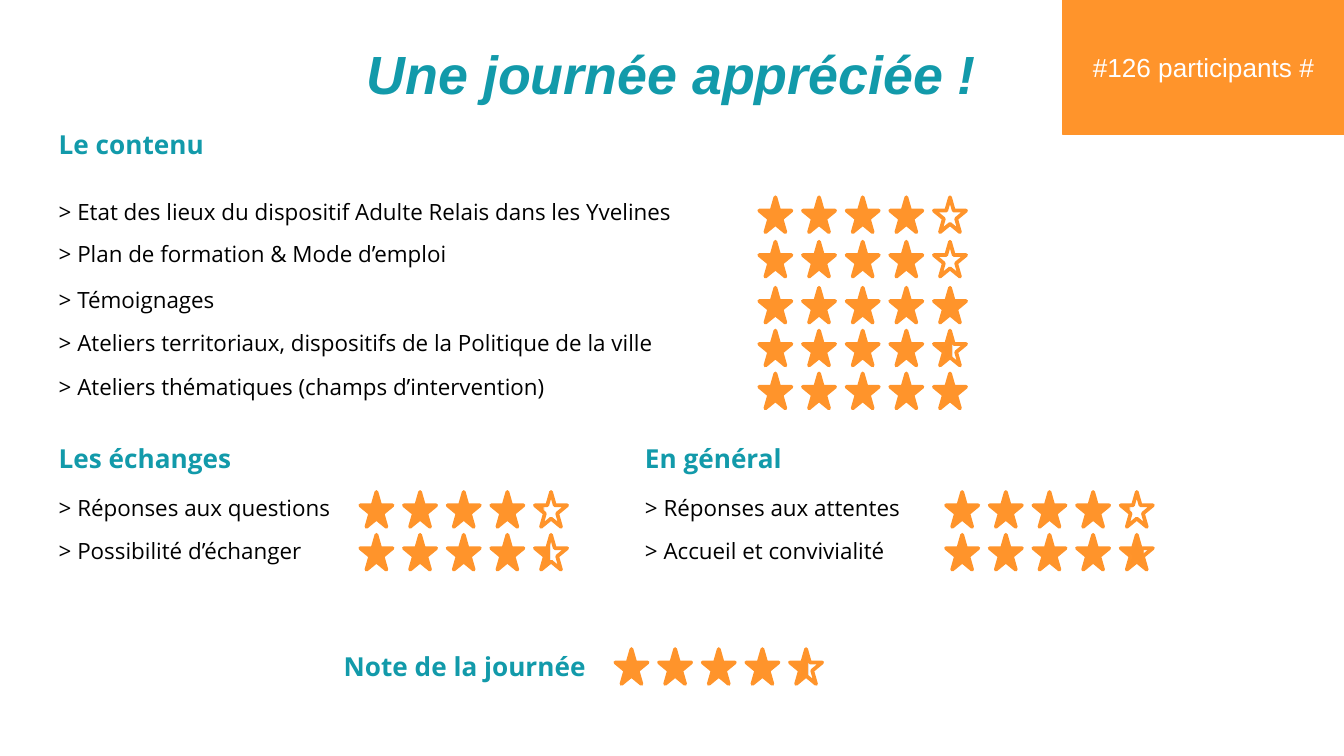
from lxml import etree
from pptx import Presentation
from pptx import util as u
from pptx.dml import color
from pptx.enum import shapes, text
from pptx.oxml import ns

TEAL = color.RGBColor(0x12, 0x9A, 0xAA)
ORANGE = color.RGBColor(0xFF, 0x94, 0x2B)
BLACK = color.RGBColor(0x00, 0x00, 0x00)
WHITE = color.RGBColor(0xFF, 0xFF, 0xFF)
LEFT, RIGHT = 0.86, 11.94
STAR_WIDTH, STAR_HEIGHT, STAR_STEP = 0.61, 0.66, 3.3 / 4

deck = Presentation()
deck.slide_width, deck.slide_height = u.Cm(25.4), u.Cm(14.29)
page = deck.slides.add_slide(deck.slide_layouts[6])


def write(box, words, size, ink, font="Open Sans", bold=False, align=text.PP_ALIGN.LEFT):
    frame = box.text_frame
    frame.word_wrap = True
    frame.margin_left = frame.margin_right = u.Cm(0.25)
    frame.margin_top = frame.margin_bottom = u.Cm(0.25)
    para = frame.paragraphs[0]
    para.text = words
    para.alignment = align
    para.line_spacing = 0.9
    para.font.name, para.font.size, para.font.bold = font, u.Pt(size), bold
    para.font.color.rgb = ink
    return box


def rate(left, top, last):
    for index in range(5):
        star = page.shapes.add_shape(
            shapes.MSO_SHAPE.STAR_5_POINT, u.Cm(left + index * STAR_STEP), u.Cm(top),
            u.Cm(STAR_WIDTH), u.Cm(STAR_HEIGHT))
        star.shadow.inherit = False
        star.line.color.rgb = ORANGE
        star.line.width = u.Pt(2)
        etree.SubElement(star.line.fill._xPr, ns.qn("a:round"))
        if index < 4 or last == "full":
            star.fill.solid()
            star.fill.fore_color.rgb = ORANGE
        elif last == "empty":
            star.fill.background()
        else:
            star.fill.gradient()
            star.fill.gradient_angle = 0
            for stop, position in zip(star.fill.gradient_stops, last):
                stop.position = position
                stop.color.rgb = ORANGE
            clear = star._element.spPr.findall(".//" + ns.qn("a:gs"))[-1][0]
            etree.SubElement(clear, ns.qn("a:alpha"), val="0")


title = page.shapes.add_textbox(u.Cm(LEFT), u.Cm(0.71), u.Cm(23.67), u.Cm(1.55))
write(title, "Une journée appréciée !", 28.8, TEAL, "Arial", True, text.PP_ALIGN.CENTER)
title.text_frame.vertical_anchor = text.MSO_ANCHOR.BOTTOM
title.text_frame.paragraphs[0].font.italic = True

headings = [
    ("Le contenu", LEFT, 2.24, 3.25, text.PP_ALIGN.LEFT),
    ("Les échanges", LEFT, 8.18, 4.83, text.PP_ALIGN.LEFT),
    ("En général", RIGHT, 8.18, 4.83, text.PP_ALIGN.LEFT),
    ("Note de la journée", 4.85, 12.12, 7.87, text.PP_ALIGN.CENTER),
]
for words, left, top, width, align in headings:
    box = page.shapes.add_textbox(u.Cm(left), u.Cm(top), u.Cm(width), u.Cm(1.12))
    write(box, words, 14, TEAL, bold=True, align=align)

ratings = [
    ("> Etat des lieux du dispositif Adulte Relais dans les Yvelines",
     LEFT, 3.58, 12.83, 14.35, 3.73, "empty"),
    ("> Plan de formation & Mode d’emploi", LEFT, 4.37, 9.19, 14.35, 4.57, "empty"),
    ("> Témoignages", LEFT, 5.23, 9.19, 14.35, 5.44, "full"),
    ("> Ateliers territoriaux, dispositifs de la Politique de la ville",
     LEFT, 6.05, 12.83, 14.35, 6.25, (0.55, 0.57)),
    ("> Ateliers thématiques (champs d’intervention)",
     LEFT, 6.88, 12.83, 14.35, 7.06, "full"),
    ("> Réponses aux questions", LEFT, 9.17, 5.94, 6.81, 9.3, (0.26, 0.31)),
    ("> Possibilité d’échanger", LEFT, 9.98, 5.72, 6.81, 10.11, (0.47, 0.47)),
    ("> Réponses aux attentes", RIGHT, 9.17, 5.94, 17.88, 9.3, (0.26, 0.31)),
    ("> Accueil et convivialité", RIGHT, 9.98, 5.72, 17.88, 10.11, (0.69, 0.7)),
]
for words, left, top, width, star_left, star_top, last in ratings:
    box = page.shapes.add_textbox(u.Cm(left), u.Cm(top), u.Cm(width), u.Cm(1.02))
    write(box, words, 12, BLACK)
    rate(star_left, star_top, last)
rate(11.63, 12.27, (0.55, 0.57))

badge = page.shapes.add_shape(
    shapes.MSO_SHAPE.RECTANGLE, u.Cm(20.09), u.Cm(0), u.Cm(5.31), u.Cm(2.54))
badge.shadow.inherit = False
badge.fill.solid()
badge.fill.fore_color.rgb = ORANGE
badge.line.color.rgb = ORANGE
badge.line.width = u.Pt(0.75)
write(badge, "#126 participants #", 14, WHITE, "Arial", align=text.PP_ALIGN.CENTER)
badge.text_frame.vertical_anchor = text.MSO_ANCHOR.MIDDLE
badge.text_frame.paragraphs[0].line_spacing = 1.0

deck.save("out.pptx")
